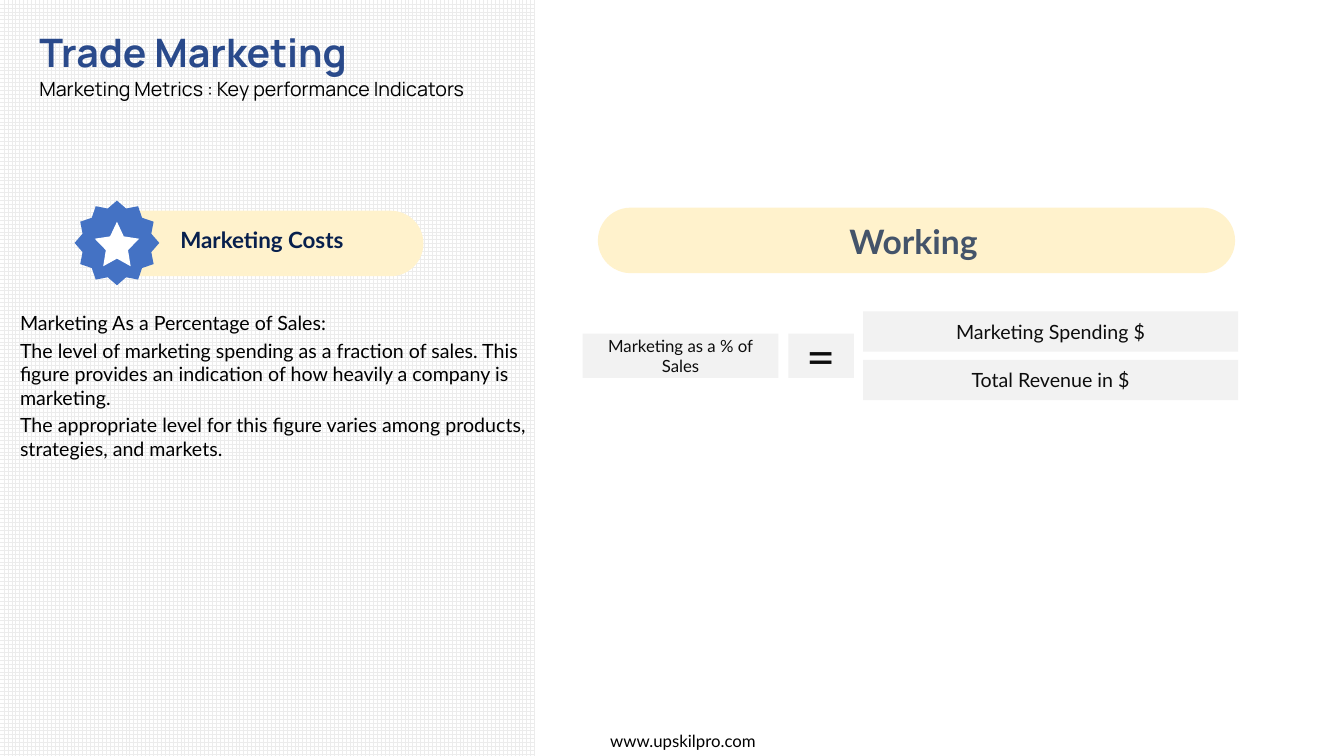
"""Build the Trade Marketing slide on marketing as a percentage of sales."""
import pptx
import pptx.util
import pptx.dml.color
import pptx.enum.dml
import pptx.enum.shapes
import pptx.enum.text

HEADING = "Trade Marketing"
SUBHEADING = "Marketing Metrics : Key performance Indicators"
METRIC = "Marketing Costs"
EXPLANATION = [
    "Marketing As a Percentage of Sales:",
    "The level of marketing spending as a fraction of sales. This figure provides "
    "an indication of how heavily a company is marketing.",
    "The appropriate level for this figure varies among products, strategies, and markets.",
]
WORKING = "Working"
RESULT = "Marketing as a % of Sales"
FRACTION = ["Marketing Spending $", "Total Revenue in $"]
WEBSITE = "www.upskilpro.com"

COLORS = {
    "grid": "ECECEC", "white": "FFFFFF", "banner": "FFF2CC", "badge": "4472C4",
    "cell": "F2F2F2", "cell_text": "0D0D0D", "black": "000000", "metric": "08204D",
    "working": "44546A", "heading": "2A4A8B",
}
PX = 9144
SHAPE = pptx.enum.shapes.MSO_SHAPE
ANCHOR = pptx.enum.text.MSO_ANCHOR
ALIGN = pptx.enum.text.PP_ALIGN


def color(name):
    return pptx.dml.color.RGBColor.from_string(COLORS[name])


def box(*px):
    return [pptx.util.Emu(length * PX) for length in px]


def write(holder, lines, size=14, ink="black", font="Lato", bold=False, align=ALIGN.LEFT,
          anchor=ANCHOR.TOP, wrap=True, gap=0):
    frame = holder.text_frame
    frame.word_wrap = wrap
    frame.vertical_anchor = anchor
    frame.auto_size = pptx.enum.text.MSO_AUTO_SIZE.NONE
    for index, line in enumerate(lines):
        paragraph = frame.paragraphs[0] if index == 0 else frame.add_paragraph()
        paragraph.alignment = align
        if index and gap:
            paragraph.space_before = pptx.util.Pt(gap)
        run = paragraph.add_run()
        run.text = line
        run.font.size = pptx.util.Pt(size)
        run.font.name = font
        run.font.bold = bold
        run.font.color.rgb = color(ink)


def draw(slide, kind, px, fill, adjust=()):
    shape = slide.shapes.add_shape(kind, *box(*px))
    shape.shadow.inherit = False
    shape.line.fill.background()
    shape.fill.solid()
    shape.fill.fore_color.rgb = color(fill)
    for index, value in enumerate(adjust):
        shape.adjustments[index] = value
    return shape


def draw_cell(slide, px, text, size=14):
    cell = draw(slide, SHAPE.RECTANGLE, px, "cell")
    write(cell, [text], size=size, ink="cell_text", align=ALIGN.CENTER, anchor=ANCHOR.MIDDLE)


def add_text(slide, px, lines, **style):
    write(slide.shapes.add_textbox(*box(*px)), lines, **style)


def main():
    deck = pptx.Presentation()
    deck.slide_width, deck.slide_height = box(1333, 750)
    slide = deck.slides.add_slide(deck.slide_layouts[5])

    title = slide.shapes.title
    title.left, title.top, title.width, title.height = box(29, 23, 870, 82)
    write(title, [HEADING, SUBHEADING], font="Manrope")
    heading, subheading = title.text_frame.paragraphs
    heading.runs[0].font.size = pptx.util.Pt(28)
    heading.runs[0].font.bold = True
    heading.runs[0].font.color.rgb = color("heading")
    subheading.line_spacing = 1.07

    panel = draw(slide, SHAPE.RECTANGLE, (0, 0, 531, 750), "white")
    panel.fill.patterned()
    panel.fill.pattern = pptx.enum.dml.MSO_PATTERN.LARGE_GRID
    panel.fill.fore_color.rgb = color("grid")
    panel.fill.back_color.rgb = color("white")
    title.element.addprevious(panel.element)

    add_text(slide, (10, 304, 528, 166), EXPLANATION, gap=2.8)

    draw(slide, SHAPE.ROUNDED_RECTANGLE, (88, 209, 332, 65), "banner", [0.5])
    draw(slide, SHAPE.STAR_12_POINT, (74, 199, 84, 84), "badge", [0.42])
    draw(slide, SHAPE.STAR_5_POINT, (94, 220, 44, 44), "white", [0.25, 1.05, 1.11])
    add_text(slide, (169, 219, 182, 37), [METRIC], size=16, ink="metric", bold=True,
             anchor=ANCHOR.MIDDLE, wrap=False)

    draw_cell(slide, (578, 331, 194, 44), RESULT, size=12)
    draw_cell(slide, (782, 331, 65, 44), "=", size=36)
    for row, term in enumerate(FRACTION):
        draw_cell(slide, (856, 309 + 48 * row, 372, 40), term)

    draw(slide, SHAPE.ROUNDED_RECTANGLE, (593, 206, 632, 65), "banner", [0.5])
    add_text(slide, (615, 214, 582, 50), [WORKING], size=24, ink="working", bold=True,
             align=ALIGN.CENTER, anchor=ANCHOR.BOTTOM)

    add_text(slide, (540, 720, 275, 30), [WEBSITE], size=12, align=ALIGN.CENTER)
    deck.save("out.pptx")


if __name__ == "__main__":
    main()
